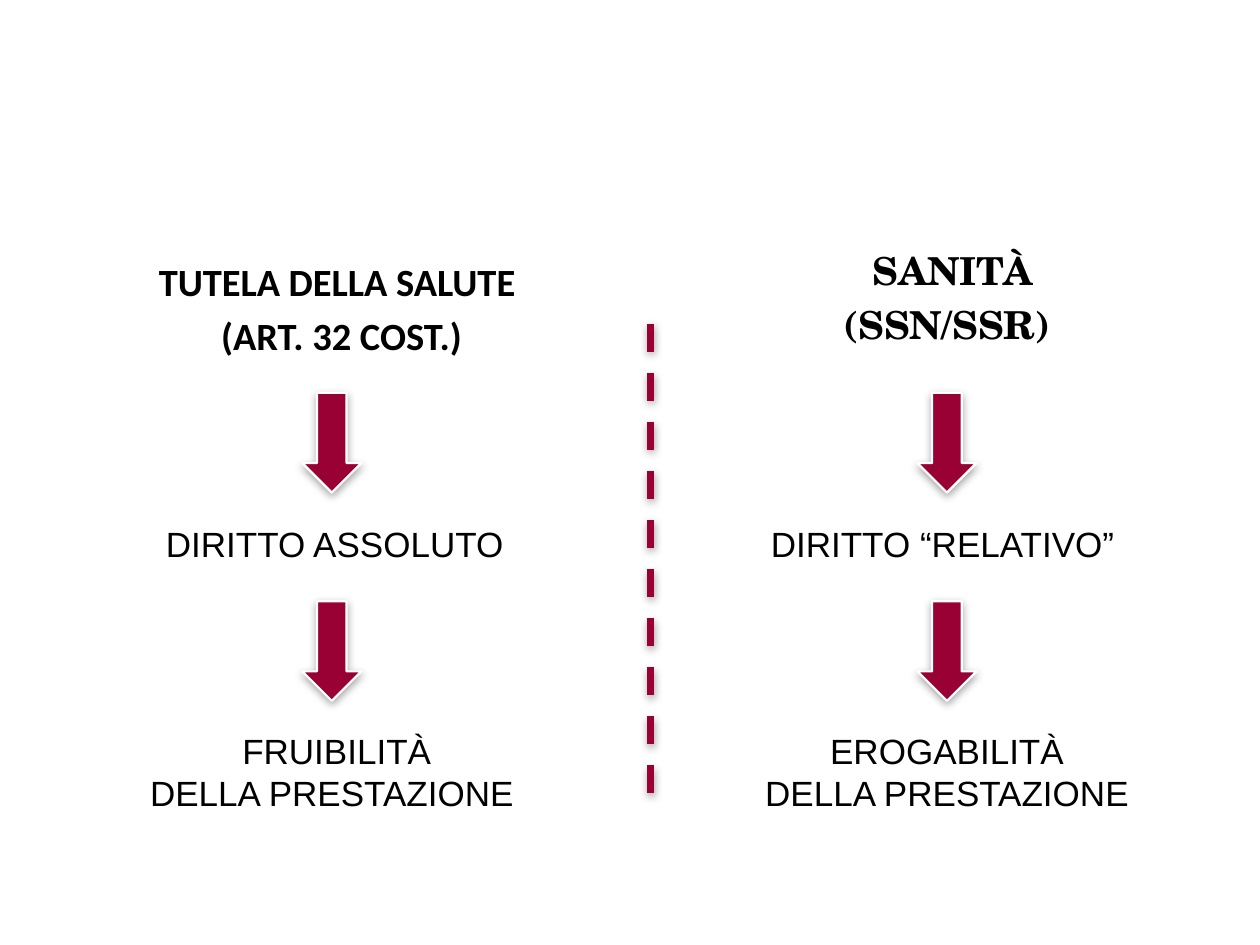
"""Build a slide comparing the right to health with the health service."""
import lxml.etree
import pptx
import pptx.dml.color
import pptx.enum.dml
import pptx.enum.shapes
import pptx.enum.text
import pptx.oxml.ns
import pptx.util
from pptx.util import Cm, Pt

ALIGN = pptx.enum.text.PP_ALIGN
ANCHOR = pptx.enum.text.MSO_ANCHOR
THEME = {
    "accent": pptx.dml.color.RGBColor.from_string("990033"),
    "outline": pptx.dml.color.RGBColor.from_string("FFFFFF"),
    "text": pptx.dml.color.RGBColor.from_string("000000"),
    "body_font": "Arial",
    "heading_size": Pt(22),
    "body_size": Pt(20),
}
COLUMNS = [
    {
        "axis": 6.69,
        "heading": ["TUTELA DELLA SALUTE ", "(ART. 32 COST.)"],
        "heading_font": "Calibri",
        "heading_box": (1.27, 5.13, 11.23, 2.21),
        "right": ["DIRITTO ASSOLUTO"],
        "right_width": 7.39,
        "outcome": ["FRUIBILITÀ", "DELLA PRESTAZIONE "],
    },
    {
        "axis": 19.09,
        "heading": ["SANITÀ", "(SSN/SSR) "],
        "heading_font": "TeX Gyre Schola",
        "heading_box": (14.88, 4.95, 8.64, 2.18),
        "right": ["DIRITTO “RELATIVO”"],
        "right_width": 7.8,
        "outcome": ["EROGABILITÀ ", "DELLA PRESTAZIONE "],
    },
]
ARROW_TOPS = (7.92, 12.12)
ARROW_WIDTH, ARROW_HEIGHT = 1.19, 2.01
RIGHT_TOP, RIGHT_HEIGHT = 10.41, 1.12
OUTCOME_TOP, OUTCOME_WIDTH, OUTCOME_HEIGHT = 14.58, 8.2, 1.96
TEXT_SHIFT = 0.1
DIVIDER_X, DIVIDER_TOP, DIVIDER_BOTTOM = 13.11, 6.53, 16.13


def add_text(slide, lines, place, font, size, bold=False, align=ALIGN.CENTER,
             anchor=ANCHOR.TOP, space=0):
    box = slide.shapes.add_textbox(*map(Cm, place))
    frame = box.text_frame
    frame.word_wrap = True
    frame.vertical_anchor = anchor
    frame.text = "\n".join(lines)
    for para in frame.paragraphs:
        para.alignment = align
        para.space_before = Pt(space)
        for span in para.runs:
            span.font.name = font
            span.font.size = size
            span.font.bold = bold
            span.font.color.rgb = THEME["text"]


def add_shadow(shape, distance, opacity):
    qn = pptx.oxml.ns.qn
    effects = lxml.etree.SubElement(shape._element.spPr, qn("a:effectLst"))
    shadow = lxml.etree.SubElement(
        effects, qn("a:outerShdw"), blurRad=str(Pt(5)), dist=str(Pt(distance)),
        dir="5400000", rotWithShape="0")
    color = lxml.etree.SubElement(shadow, qn("a:srgbClr"), val="000000")
    lxml.etree.SubElement(color, qn("a:alpha"), val=str(opacity * 1000))


def add_arrow(slide, axis, top):
    arrow = slide.shapes.add_shape(
        pptx.enum.shapes.MSO_SHAPE.DOWN_ARROW, Cm(axis - ARROW_WIDTH / 2),
        Cm(top), Cm(ARROW_WIDTH), Cm(ARROW_HEIGHT))
    arrow.fill.solid()
    arrow.fill.fore_color.rgb = THEME["accent"]
    arrow.line.color.rgb = THEME["outline"]
    arrow.line.width = Pt(1.25)
    add_shadow(arrow, 1.8, 35)


def add_column(slide, column):
    axis = column["axis"]
    center = axis + TEXT_SHIFT
    add_text(slide, column["heading"], column["heading_box"],
             column["heading_font"], THEME["heading_size"], bold=True,
             anchor=ANCHOR.BOTTOM, space=4.4)
    for top in ARROW_TOPS:
        add_arrow(slide, axis, top)
    width = column["right_width"]
    add_text(slide, column["right"],
             (center - width / 2, RIGHT_TOP, width, RIGHT_HEIGHT),
             THEME["body_font"], THEME["body_size"], align=ALIGN.LEFT)
    add_text(slide, column["outcome"],
             (center - OUTCOME_WIDTH / 2, OUTCOME_TOP, OUTCOME_WIDTH,
              OUTCOME_HEIGHT),
             THEME["body_font"], THEME["body_size"])


def add_divider(slide):
    divider = slide.shapes.add_connector(
        pptx.enum.shapes.MSO_CONNECTOR.STRAIGHT, Cm(DIVIDER_X),
        Cm(DIVIDER_TOP), Cm(DIVIDER_X), Cm(DIVIDER_BOTTOM))
    divider.line.color.rgb = THEME["accent"]
    divider.line.width = Pt(4)
    divider.line.dash_style = pptx.enum.dml.MSO_LINE.DASH
    add_shadow(divider, 1.6, 38)


def main():
    deck = pptx.Presentation()
    deck.slide_width, deck.slide_height = Cm(25.4), Cm(19.05)
    slide = deck.slides.add_slide(deck.slide_layouts[6])
    for column in COLUMNS:
        add_column(slide, column)
    add_divider(slide)
    deck.save("out.pptx")


if __name__ == "__main__":
    main()
